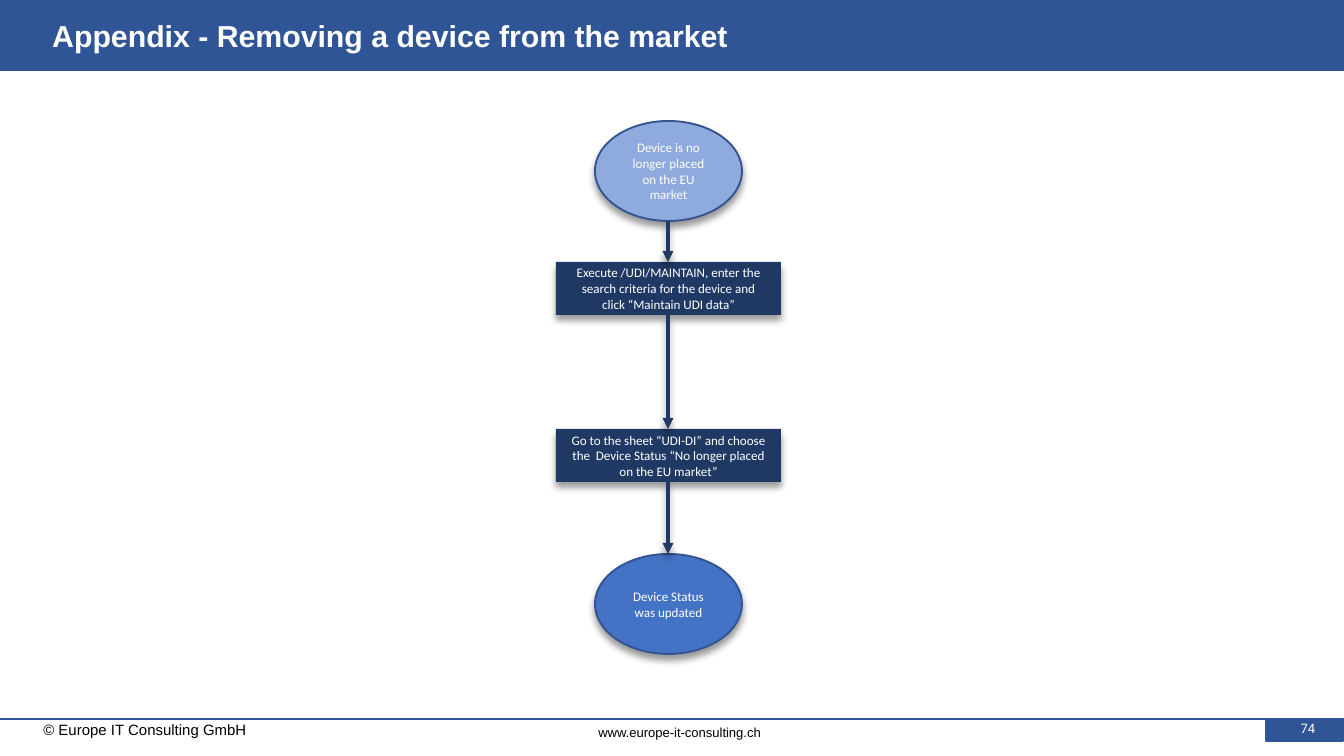
import itertools

import pptx
import pptx.dml.color
import pptx.enum.shapes
import pptx.enum.text
import pptx.oxml
import pptx.oxml.ns
import pptx.util

PX = 914400 / 134.4
BLUE, NAVY, EDGE = "2F5597", "203864", "325491"
WHITE, BLACK = "FFFFFF", "000000"
SHAPE = pptx.enum.shapes.MSO_SHAPE
ALIGN = pptx.enum.text.PP_ALIGN
ANCHOR = pptx.enum.text.MSO_ANCHOR
NS = pptx.oxml.ns.nsdecls("a")
SHADOW = (f'<a:effectLst {NS}><a:outerShdw blurRad="50800" dist="38100" dir="5400000" '
          'rotWithShape="0"><a:srgbClr val="000000"><a:alpha val="40000"/></a:srgbClr>'
          '</a:outerShdw></a:effectLst>')


def px(n):
    return pptx.util.Emu(round(n * PX))


def rgb(color):
    return pptx.dml.color.RGBColor.from_string(color)


class Deck:
    """Holds the style and the current slide, and draws each kind of element."""

    def __init__(self, width, height):
        self.prs = pptx.Presentation()
        self.prs.slide_width, self.prs.slide_height = px(width), px(height)
        self.s = self.prs.slides.add_slide(self.prs.slide_layouts[6])

    def add_text(self, sp, text, size, font, color, align, anchor, bold=False):
        tf = sp.text_frame
        tf.word_wrap = True
        tf.vertical_anchor = anchor
        p = tf.paragraphs[0]
        p.alignment = align
        r = p.add_run()
        r.text = text
        r.font.size, r.font.name, r.font.bold = pptx.util.Pt(size), font, bold
        r.font.color.rgb = rgb(color)

    def text(self, x, y, w, h, text, size, font="Arial", color=BLACK,
             align=ALIGN.RIGHT, anchor=ANCHOR.MIDDLE, bold=False):
        sp = self.s.shapes.add_textbox(px(x), px(y), px(w), px(h))
        self.add_text(sp, text, size, font, color, align, anchor, bold)

    def shape(self, kind, x, y, w, h, fill, line=None):
        sp = self.s.shapes.add_shape(kind, px(x), px(y), px(w), px(h))
        sp.shadow.inherit = False
        sp.fill.solid()
        sp.fill.fore_color.rgb = rgb(fill)
        if line:
            sp.line.color.rgb = rgb(line)
            sp.line.width = pptx.util.Pt(1)
        else:
            sp.line.fill.background()
        return sp

    def cast_shadow(self, sp):
        pr = sp._element.spPr
        old = pr.find(pptx.oxml.ns.qn("a:effectLst"))
        pr.replace(old, pptx.oxml.parse_xml(SHADOW))

    def step(self, kind, center, y, w, h, fill, line, text):
        sp = self.shape(kind, center - w // 2, y, w, h, fill, line)
        self.cast_shadow(sp)
        self.add_text(sp, text, 7, "Calibri", WHITE, ALIGN.CENTER, ANCHOR.MIDDLE)

    def line(self, x1, y1, x2, y2, color, width):
        sp = self.s.shapes.add_connector(
            pptx.enum.shapes.MSO_CONNECTOR.STRAIGHT, px(x1), px(y1), px(x2), px(y2))
        sp.line.color.rgb = rgb(color)
        sp.line.width = pptx.util.Pt(width)
        sp._element.spPr.append(pptx.oxml.parse_xml(f"<a:effectLst {NS}/>"))
        return sp

    def arrow(self, x, y1, y2):
        sp = self.line(x, y1, x, y2, NAVY, 1.75)
        ln = sp._element.spPr.find(pptx.oxml.ns.qn("a:ln"))
        ln.append(pptx.oxml.parse_xml(f'<a:tailEnd {NS} type="triangle"/>'))
        self.cast_shadow(sp)


def main():
    deck = Deck(1344, 756)

    deck.shape(SHAPE.RECTANGLE, 1266, 719, 77, 22, BLUE, BLUE)
    deck.text(1267, 714, 82, 27, "74", 7, "Roboto", WHITE, ALIGN.CENTER, ANCHOR.TOP)
    deck.line(0, 719, 1344, 719, BLUE, 1.5)
    deck.shape(SHAPE.RECTANGLE, 0, -4, 1344, 75, BLUE)
    deck.text(13, 718, 247, 24, "© Europe IT Consulting GmbH", 8)
    deck.text(570, 722, 204, 21, "www.europe-it-consulting.ch", 7)
    deck.text(39, 11, 1163, 49, "Appendix - Removing a device from the market", 16.2,
              color=WHITE, align=ALIGN.LEFT, bold=True)

    center = 668
    ellipse = (SHAPE.FLOWCHART_CONNECTOR, 147, 100)
    box = (SHAPE.RECTANGLE, 225, 53)
    steps = [
        (121, ellipse, "8FAADC", EDGE, "Device is no longer placed on the EU market"),
        (262, box, NAVY, None, "Execute /UDI/MAINTAIN, enter the search criteria "
                               "for the device and click “Maintain UDI data”"),
        (429, box, NAVY, None, "Go to the sheet “UDI-DI” and choose the  Device Status "
                               "“No longer placed on the EU market”"),
        (554, ellipse, "4472C4", EDGE, "Device Status was updated"),
    ]
    for y, (kind, w, h), fill, line, text in steps:
        deck.step(kind, center, y, w, h, fill, line, text)
    for (y, (_, _, h), *_), (below, *_) in itertools.pairwise(steps):
        deck.arrow(center, y + h, below)

    deck.prs.save("out.pptx")


if __name__ == "__main__":
    main()
